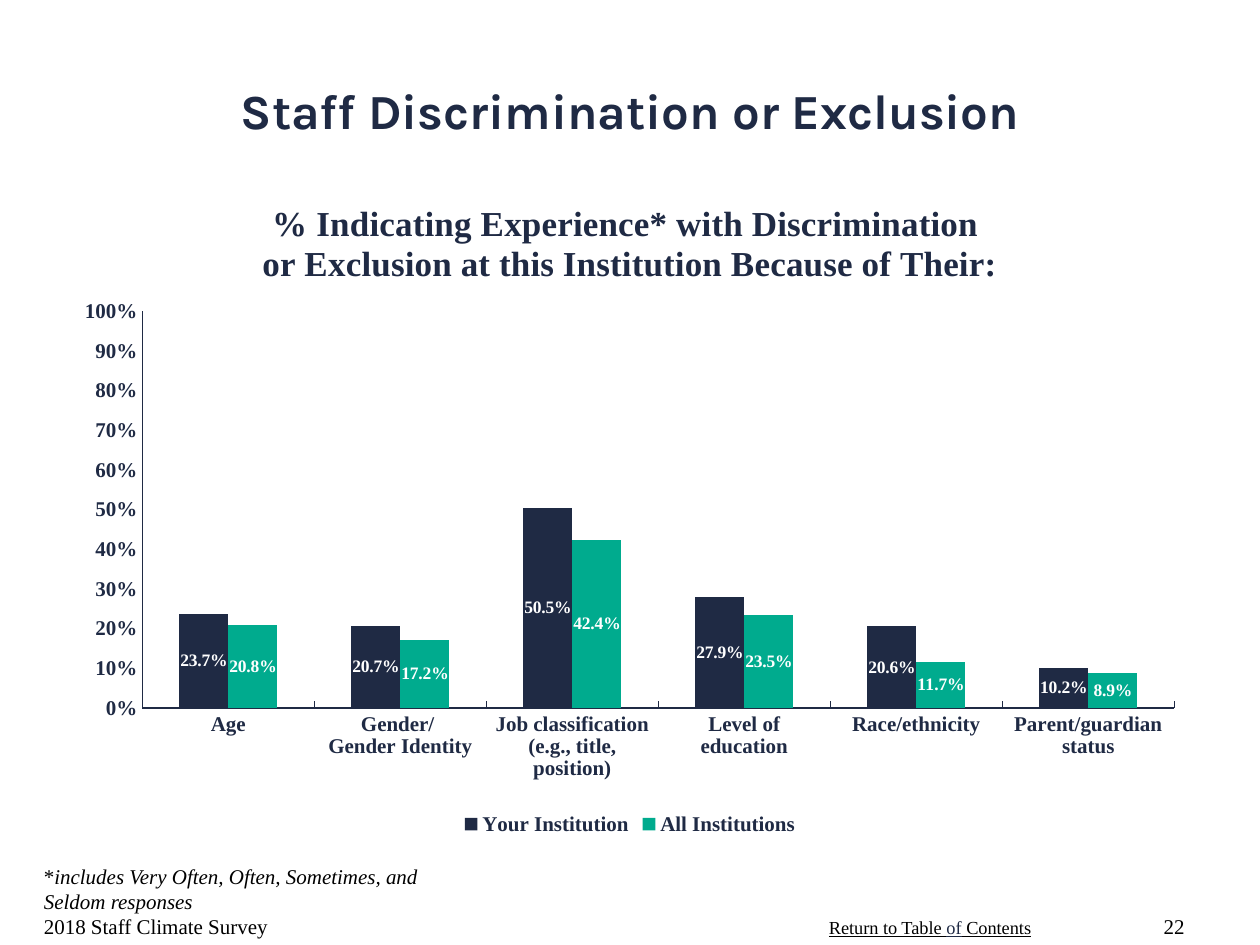
from typing import NamedTuple

from lxml.etree import SubElement
from pptx import Presentation
from pptx.chart.data import CategoryChartData
from pptx.dml.color import RGBColor
from pptx.enum.chart import XL_CHART_TYPE as Kind
from pptx.enum.chart import XL_LABEL_POSITION as Spot
from pptx.enum.chart import XL_LEGEND_POSITION as Side
from pptx.enum.chart import XL_TICK_MARK as Tick
from pptx.enum.text import MSO_ANCHOR as Anchor
from pptx.enum.text import PP_ALIGN as Align
from pptx.oxml.ns import qn
from pptx.util import Inches, Pt

NAVY = RGBColor(0x1F, 0x2A, 0x44)
GREEN = RGBColor(0x00, 0xAB, 0x8E)
BLACK = RGBColor(0, 0, 0)
WHITE = RGBColor(255, 255, 255)
SERIF = "Times New Roman"
COLS, ROWS = 40, 30


class Area(NamedTuple):
    """A place on the slide, in columns and rows of the grid."""
    col: float
    row: float
    wide: float
    high: float


class Style(NamedTuple):
    size: float
    color: RGBColor = BLACK
    name: str = SERIF
    bold: bool = False


class Run(NamedTuple):
    text: str
    italic: bool = False
    color: RGBColor | None = None


class Box(NamedTuple):
    area: Area
    style: Style
    lines: list[list[Run]]
    align: Align = Align.LEFT
    anchor: Anchor = Anchor.BOTTOM
    wrap: bool = True
    under: bool = False


class Group(NamedTuple):
    name: str
    color: RGBColor
    values: list[float]


BOXES = [
    Box(Area(25.92, 28.88, 7.28, 1.12), Style(10.5),
        [[Run("Return to Table "), Run("of", color=NAVY), Run(" Contents")]],
        anchor=Anchor.TOP, wrap=False, under=True),
    Box(Area(0, 1, 40, 5), Style(28, NAVY, "Karla", True),
        [[Run("Staff Discrimination or Exclusion")]],
        Align.CENTER, Anchor.MIDDLE),
    Box(Area(1, 28, 12.68, 2), Style(12),
        [[Run("*"), Run("includes Very Often, Often, Sometimes, "
                        "and Seldom responses", italic=True)],
         [Run("2018 Staff Climate Survey")]]),
    Box(Area(36, 28, 2, 2), Style(12), [[Run("22")]], Align.RIGHT),
]

CHART = Area(2, 5.68, 36, 21)
PLOT = {"x": 0.07, "y": 0.2, "w": 0.91, "h": 0.6}
HEAD = ["% Indicating Experience* with Discrimination ",
        "or Exclusion at this Institution Because of Their:"]
CAUSES = ["Age", "Gender/ \nGender Identity",
          "Job classification (e.g., title, position)",
          "Level of education", "Race/ethnicity", "Parent/guardian status"]
GROUPS = [
    Group("Your Institution", NAVY,
          [0.237, 0.207, 0.505, 0.279, 0.206, 0.102]),
    Group("All Institutions", GREEN,
          [0.208, 0.172, 0.424, 0.235, 0.117, 0.089]),
]


def place(deck, area: Area) -> tuple[int, int, int, int]:
    col, row = deck.slide_width / COLS, deck.slide_height / ROWS
    return (int(area.col * col), int(area.row * row),
            int(area.wide * col), int(area.high * row))


def dress(font, style: Style) -> None:
    font.size, font.bold, font.name = Pt(style.size), style.bold, style.name
    font.color.rgb = style.color


def write(deck, slide, box: Box) -> None:
    frame = slide.shapes.add_textbox(*place(deck, box.area)).text_frame
    frame.word_wrap, frame.vertical_anchor = box.wrap, box.anchor
    for i, line in enumerate(box.lines):
        para = frame.paragraphs[0] if i == 0 else frame.add_paragraph()
        para.alignment = box.align
        dress(para.font, box.style)
        para.font.underline = box.under
        for part in line:
            run = para.add_run()
            run.text = part.text
            if part.italic:
                run.font.italic = True
            if part.color is not None:
                run.font.color.rgb = part.color


def fix_plot(chart) -> None:
    """Pin the inner plot area to its shares of the chart."""
    plot = chart.plots[0]._element.getparent()
    for old in plot.findall(qn("c:layout")):
        plot.remove(old)
    layout = SubElement(plot, qn("c:layout"))
    plot.insert(0, layout)
    manual = SubElement(layout, qn("c:manualLayout"))
    marks = {"layoutTarget": "inner", "xMode": "edge", "yMode": "edge"}
    for tag, value in (marks | PLOT).items():
        SubElement(manual, qn(f"c:{tag}")).set("val", str(value))


def draw_chart(deck, slide) -> None:
    data = CategoryChartData(number_format="0.0%")
    data.categories = CAUSES
    for group in GROUPS:
        data.add_series(group.name, group.values)
    chart = slide.shapes.add_chart(
        Kind.COLUMN_CLUSTERED, *place(deck, CHART), data).chart
    dress(chart.font, Style(10, NAVY, bold=True))

    chart.has_title = True
    title = chart.chart_title.text_frame
    for i, text in enumerate(HEAD):
        para = title.paragraphs[0] if i == 0 else title.add_paragraph()
        para.add_run().text = text
        dress(para.font, Style(20, NAVY, bold=True))

    label = Style(12, NAVY, bold=True)
    chart.has_legend = True
    chart.legend.position = Side.BOTTOM
    chart.legend.include_in_layout = False
    dress(chart.legend.font, label)

    cat, val = chart.category_axis, chart.value_axis
    for axis, tick in ((cat, Tick.INSIDE), (val, Tick.NONE)):
        axis.major_tick_mark, axis.minor_tick_mark = tick, Tick.NONE
        axis.has_major_gridlines = False
        axis.format.line.color.rgb = NAVY
        axis.format.line.width = Pt(0.75)
        dress(axis.tick_labels.font, label)
    val.minimum_scale, val.maximum_scale, val.major_unit = 0, 1, 0.1
    val.tick_labels.number_format = "0%"
    val.tick_labels.number_format_is_linked = False

    plot = chart.plots[0]
    plot.gap_width, plot.overlap = 150, 0
    plot.vary_by_categories = False
    for bars, group in zip(plot.series, GROUPS):
        bars.format.fill.solid()
        bars.format.fill.fore_color.rgb = group.color
        tags = bars.data_labels
        tags.show_value, tags.position = True, Spot.CENTER
        tags.number_format, tags.number_format_is_linked = "0.0%", False
        dress(tags.font, Style(10, WHITE, bold=True))
    fix_plot(chart)


def main() -> None:
    deck = Presentation()
    deck.slide_width, deck.slide_height = Inches(10), Inches(7.5)
    slide = deck.slides.add_slide(deck.slide_layouts[6])
    draw_chart(deck, slide)
    for box in BOXES:
        write(deck, slide, box)
    deck.save("out.pptx")


if __name__ == "__main__":
    main()
